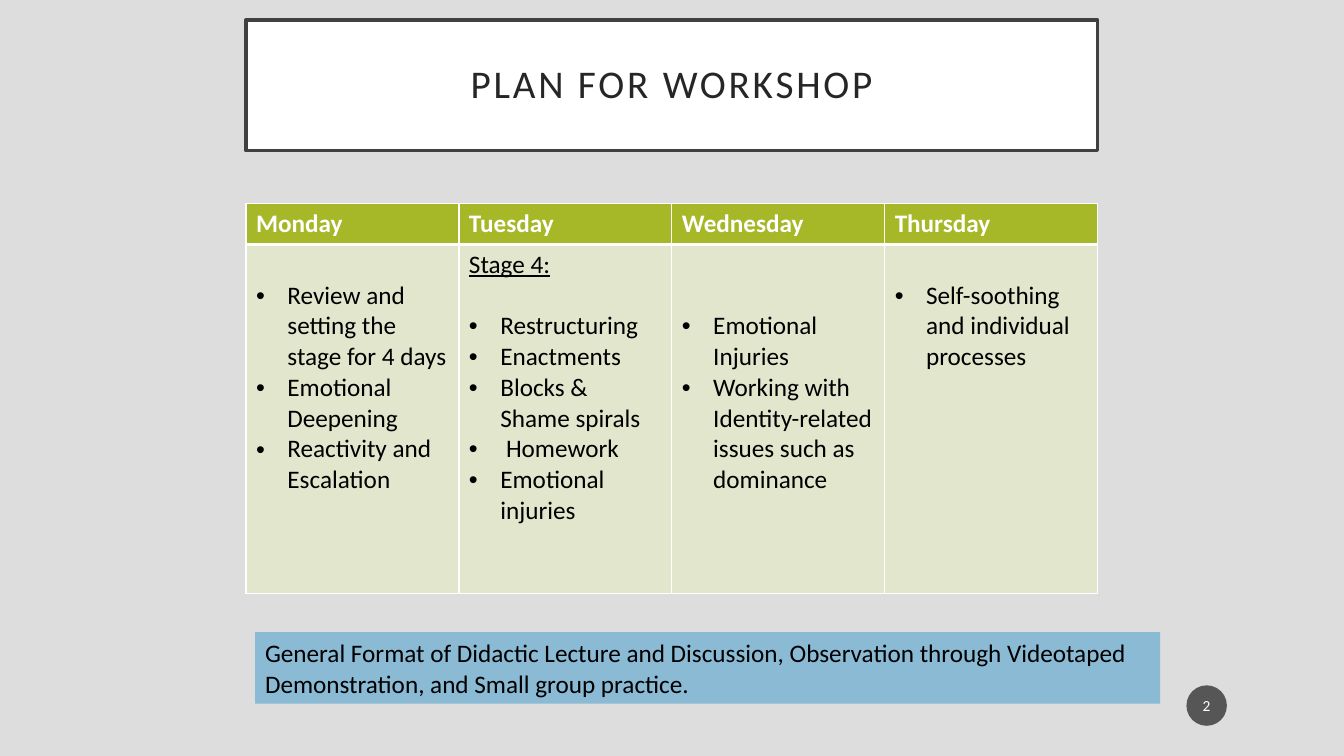
from dataclasses import dataclass

from lxml import etree
from pptx import Presentation
from pptx import util as u
from pptx.dml.color import RGBColor
from pptx.enum import shapes, text
from pptx.oxml import ns

FONT = "Calibri"
WHITE, BLACK = "FFFFFF", "000000"
HEADER_FILL, BODY_FILL = "A6B727", "E1E6CD"
LINE_HEIGHT = u.Cm(0.77)
CELL_MARGIN = u.Cm(0.13)
BULLET_INDENT = u.Cm(0.79)


@dataclass
class Day:
    name: str
    topics: list[str]
    lines_above: int
    heading: str = ""


@dataclass
class Panel:
    kind: shapes.MSO_SHAPE
    place: tuple[float, float, float, float]
    lines: list[str]
    fill: str
    color: str
    size: int
    margins: tuple[float, float]
    align: text.PP_ALIGN = text.PP_ALIGN.CENTER


DAYS = [
    Day("Monday", ["Review and setting the stage for 4 days", "Emotional Deepening",
                   "Reactivity and Escalation"], 1),
    Day("Tuesday", ["Restructuring", "Enactments", "Blocks & Shame spirals",
                    " Homework", "Emotional injuries"], 1, "Stage 4:"),
    Day("Wednesday", ["Emotional Injuries",
                      "Working with Identity-related issues such as dominance"], 2),
    Day("Thursday", ["Self-soothing and individual processes"], 1),
]

TITLE = Panel(shapes.MSO_SHAPE.RECTANGLE, (6.2, 0.5, 21.46, 3.3),
              ["PLAN FOR WORKSHOP"], WHITE, "262626", 28, (0.5, 0.5))
PAGE_NUMBER = Panel(shapes.MSO_SHAPE.OVAL, (29.9, 17.27, 1.02, 1.02),
                    ["2"], "1D1D1D", WHITE, 11, (0.05, 0.13))
FORMAT_NOTE = Panel(shapes.MSO_SHAPE.RECTANGLE, (6.43, 15.93, 22.81, 1.8),
                    ["General Format of Didactic Lecture and Discussion, "
                     "Observation through Videotaped",
                     "Demonstration, and Small group practice."],
                    "8ABAD4", BLACK, 18, (0.25, 0.13), text.PP_ALIGN.LEFT)


def paint(fill, color: str) -> None:
    fill.solid()
    fill.fore_color.rgb = RGBColor.from_string(color)


def write(frame, lines: list[str], size: int, color: str, bold: bool = False) -> None:
    frame.text = "\n".join(lines)
    for para in frame.paragraphs:
        for span in para.runs:
            span.font.name = FONT
            span.font.size = u.Pt(size)
            span.font.bold = bold
            span.font.color.rgb = RGBColor.from_string(color)


def add_panel(page, panel: Panel):
    box = page.shapes.add_shape(panel.kind, *map(u.Cm, panel.place))
    box.shadow.inherit = False
    paint(box.fill, panel.fill)
    box.line.fill.background()
    frame = box.text_frame
    frame.word_wrap = True
    frame.vertical_anchor = text.MSO_ANCHOR.MIDDLE
    frame.margin_left = frame.margin_right = u.Cm(panel.margins[0])
    frame.margin_top = frame.margin_bottom = u.Cm(panel.margins[1])
    write(frame, panel.lines, panel.size, panel.color)
    for para in frame.paragraphs:
        para.alignment = panel.align
    return box


def add_title(page) -> None:
    box = add_panel(page, TITLE)
    paint(box.line.fill, "404040")
    box.line.width = u.Pt(2.5)
    para = box.text_frame.paragraphs[0]
    para.line_spacing = 0.9
    para.runs[0].font._element.set("spc", "200")


def add_page_number(page) -> None:
    box = add_panel(page, PAGE_NUMBER)
    color = box.fill._xPr.find(".//" + ns.qn("a:srgbClr"))
    etree.SubElement(color, ns.qn("a:alpha"), val="70000")


def add_bullet(para) -> None:
    props = para._p.get_or_add_pPr()
    props.set("marL", str(BULLET_INDENT))
    props.set("indent", str(-BULLET_INDENT))
    etree.SubElement(props, ns.qn("a:buFont"), typeface="Arial")
    etree.SubElement(props, ns.qn("a:buChar"), char="•")


def style_cell(cell, fill: str, top: float, bottom: float) -> None:
    """Fill the cell and give it white borders; top and bottom are in points."""
    paint(cell.fill, fill)
    props = cell._tc.get_or_add_tcPr()
    widths = {"lnL": 1, "lnR": 1, "lnT": top, "lnB": bottom}
    for index, (side, width) in enumerate(widths.items()):
        border = etree.Element(ns.qn(f"a:{side}"), w=str(u.Pt(width)))
        solid = etree.SubElement(border, ns.qn("a:solidFill"))
        etree.SubElement(solid, ns.qn("a:srgbClr"), val=WHITE)
        props.insert(index, border)


def fill_day(cell, day: Day) -> None:
    write(cell.text_frame, ([day.heading] if day.heading else []) + day.topics, 18, BLACK)
    paras = list(cell.text_frame.paragraphs)
    gap = day.lines_above * LINE_HEIGHT
    if day.heading:
        paras.pop(0).runs[0].font.underline = True
        paras[0].space_before = u.Emu(gap)
    else:
        cell.margin_top = CELL_MARGIN + gap
    for para in paras:
        add_bullet(para)


def add_schedule(page) -> None:
    width, heights = u.Cm(21.46), (u.Cm(1.03), u.Cm(8.79))
    table = page.shapes.add_table(2, len(DAYS), u.Cm(6.2), u.Cm(5.13),
                                  width, sum(heights)).table
    table.horz_banding = False
    for row, height in zip(table.rows, heights):
        row.height = height
    for index, day in enumerate(DAYS):
        table.columns[index].width = width // len(DAYS)
        header, body = table.cell(0, index), table.cell(1, index)
        style_cell(header, HEADER_FILL, 1, 3)
        style_cell(body, BODY_FILL, 3, 1)
        write(header.text_frame, [day.name], 18, WHITE, bold=True)
        fill_day(body, day)


def main() -> None:
    deck = Presentation()
    deck.slide_width, deck.slide_height = u.Cm(33.87), u.Cm(19.05)
    page = deck.slides.add_slide(deck.slide_layouts[6])
    paint(page.background.fill, "DDDDDD")
    add_title(page)
    add_schedule(page)
    add_page_number(page)
    add_panel(page, FORMAT_NOTE)
    deck.save("out.pptx")


if __name__ == "__main__":
    main()
